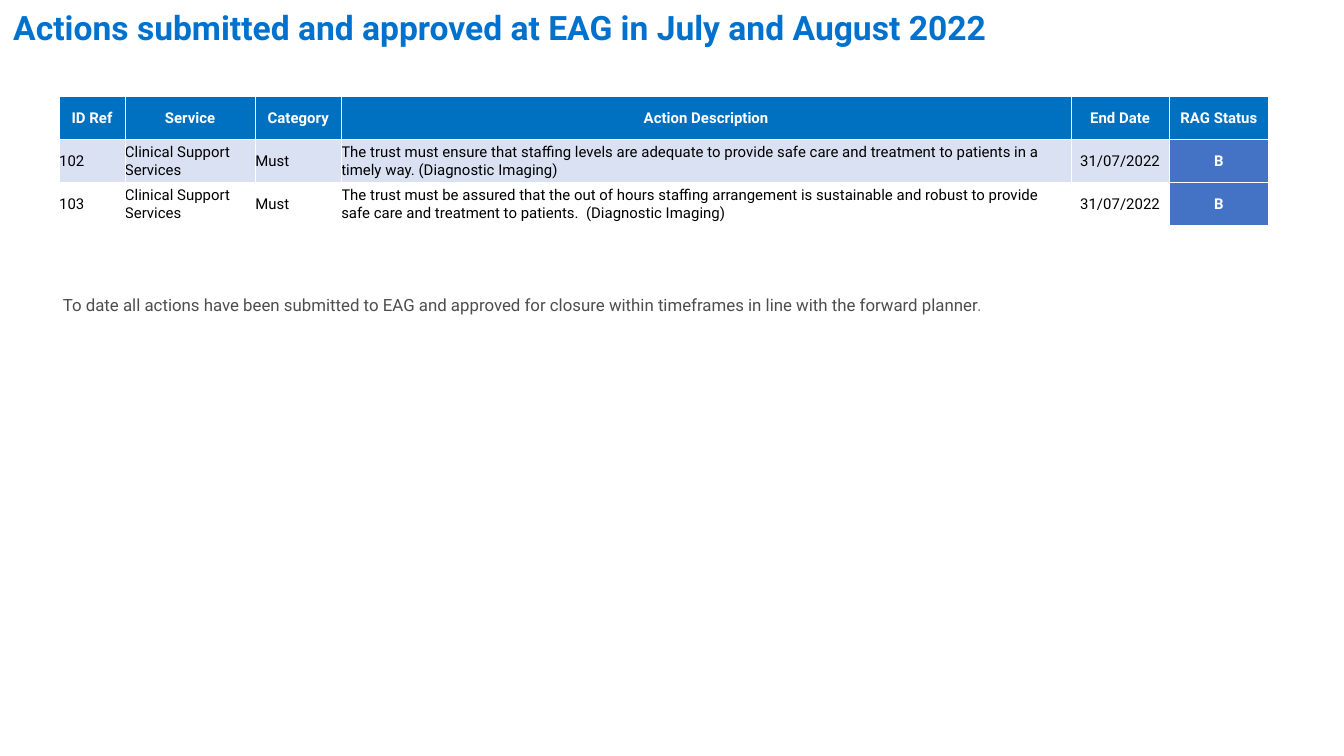
from dataclasses import dataclass

from lxml import etree
from pptx import Presentation
from pptx.dml.color import RGBColor
from pptx.enum.text import MSO_ANCHOR, PP_ALIGN
from pptx.oxml.ns import qn
from pptx.util import Inches, Pt

LEFT = PP_ALIGN.LEFT
CENTER = PP_ALIGN.CENTER
MIDDLE = MSO_ANCHOR.MIDDLE


@dataclass(frozen=True)
class Theme:
    font: str = "Roboto"
    title: str = "0072CE"
    header: str = "0070C0"
    band: str = "D9E1F2"
    status: str = "4472C4"
    white: str = "FFFFFF"
    black: str = "000000"
    note: str = "4D4D4D"
    note_end: str = "808080"
    title_size: float = 18
    table_size: float = 8
    note_size: float = 9
    border: float = 0.5


THEME = Theme()

SLIDE_WIDTH = 10
SLIDE_HEIGHT = SLIDE_WIDTH * 9 / 16
HEADINGS = ("ID Ref", "Service", "Category", "Action Description", "End Date", "RAG Status")
COLUMN_WIDTHS = (0.49, 0.97, 0.64, 5.43, 0.73, 0.74)
COLUMN_ALIGNS = (LEFT, LEFT, LEFT, LEFT, CENTER, CENTER)
STATUS_COLUMN = HEADINGS.index("RAG Status")
ROW_HEIGHT = 0.32
ACTIONS = (
    ("102", "Clinical Support Services", "Must",
     "The trust must ensure that staffing levels are adequate to provide safe care "
     "and treatment to patients in a timely way. (Diagnostic Imaging)",
     "31/07/2022", "B"),
    ("103", "Clinical Support Services", "Must",
     "The trust must be assured that the out of hours staffing arrangement is sustainable "
     "and robust to provide safe care and treatment to patients.  (Diagnostic Imaging)",
     "31/07/2022", "B"),
)


def add_span(para, text, size, color, bold=False):
    span = para.add_run()
    span.text = text
    span.font.name = THEME.font
    span.font.size = Pt(size)
    span.font.bold = bold
    span.font.color.rgb = RGBColor.from_string(color)


def add_text(page, left, top, width, height, size, spans, bold=False):
    box = page.shapes.add_textbox(Inches(left), Inches(top), Inches(width), Inches(height))
    box.text_frame.word_wrap = True
    para = box.text_frame.paragraphs[0]
    for text, color in spans:
        add_span(para, text, size, color, bold)


def set_borders(cell):
    properties = cell._tc.get_or_add_tcPr()
    for position, side in enumerate(("lnL", "lnR", "lnT", "lnB")):
        line = etree.Element(qn(f"a:{side}"), w=str(Pt(THEME.border)))
        fill = etree.SubElement(line, qn("a:solidFill"))
        etree.SubElement(fill, qn("a:srgbClr"), val=THEME.white)
        properties.insert(position, line)


def fill_cell(cell, text, align, color, bold, fill):
    cell.margin_left = cell.margin_right = cell.margin_top = cell.margin_bottom = 0
    cell.vertical_anchor = MIDDLE
    if fill:
        cell.fill.solid()
        cell.fill.fore_color.rgb = RGBColor.from_string(fill)
    else:
        cell.fill.background()
    set_borders(cell)
    para = cell.text_frame.paragraphs[0]
    para.alignment = align
    add_span(para, text, THEME.table_size, color, bold)


def add_action_table(page, left, top):
    row_count = len(ACTIONS) + 1
    table = page.shapes.add_table(
        row_count, len(HEADINGS), Inches(left), Inches(top),
        Inches(sum(COLUMN_WIDTHS)), Inches(ROW_HEIGHT * row_count)).table
    for column, width in zip(table.columns, COLUMN_WIDTHS):
        column.width = Inches(width)
    for row in table.rows:
        row.height = Inches(ROW_HEIGHT)
    for column, heading in enumerate(HEADINGS):
        fill_cell(table.cell(0, column), heading, CENTER, THEME.white, True, THEME.header)
    for row, action in enumerate(ACTIONS, start=1):
        band = THEME.band if row % 2 else None
        for column, text in enumerate(action):
            is_status = column == STATUS_COLUMN
            fill_cell(table.cell(row, column), text, COLUMN_ALIGNS[column],
                      THEME.white if is_status else THEME.black, is_status,
                      THEME.status if is_status else band)


def main():
    deck = Presentation()
    deck.slide_width = Inches(SLIDE_WIDTH)
    deck.slide_height = Inches(SLIDE_HEIGHT)
    page = deck.slides.add_slide(deck.slide_layouts[6])
    add_text(page, 0, 0, 9.75, 0.5, THEME.title_size,
             [("Actions submitted and approved at EAG in July and August 2022", THEME.title)],
             bold=True)
    add_action_table(page, 0.44, 0.72)
    add_text(page, 0.37, 2.14, 9, 0.25, THEME.note_size,
             [("To date all actions have been submitted to EAG and approved for closure "
               "within timeframes in line with the forward planner", THEME.note),
              (".", THEME.note_end)])
    deck.save("out.pptx")


if __name__ == "__main__":
    main()
